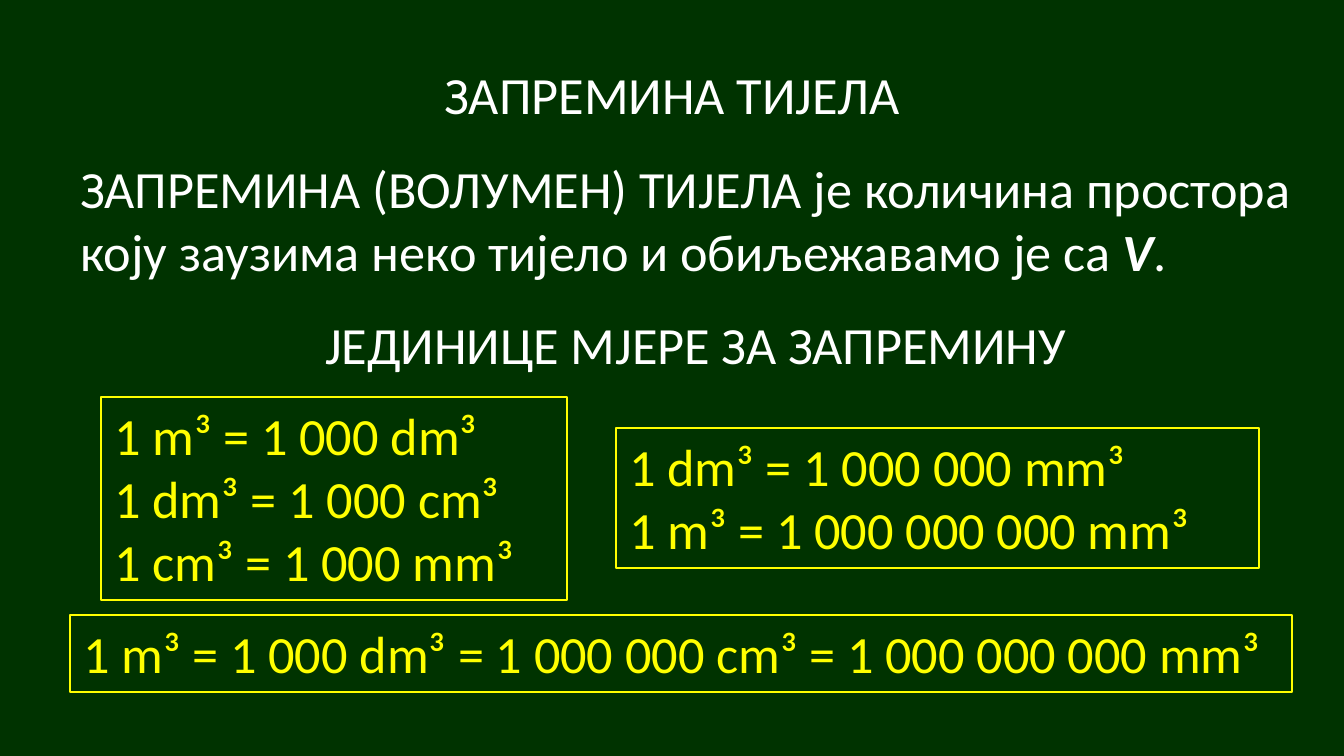
from pptx import Presentation
from pptx.dml.color import RGBColor
from pptx.enum.shapes import MSO_SHAPE
from pptx.enum.text import MSO_ANCHOR, PP_ALIGN
from pptx.util import Pt

EMU_PER_PX = 914400 / 134.4
BACKGROUND, WHITE, YELLOW = "003300", "FFFFFF", "FFFF00"


def px(length):
    return round(length * EMU_PER_PX)


def paint(target, color):
    """Give a fill a solid colour from a hex string."""
    target.solid()
    target.fore_color.rgb = RGBColor.from_string(color)


def write(shape, paragraphs, color=WHITE, size=28, align=PP_ALIGN.LEFT,
          anchor=MSO_ANCHOR.TOP):
    """Fill a shape with paragraphs, each a list of (text, emphasized) runs."""
    frame = shape.text_frame
    frame.word_wrap = True
    frame.vertical_anchor = anchor
    for index, runs in enumerate(paragraphs):
        paragraph = frame.paragraphs[0] if index == 0 else frame.add_paragraph()
        paragraph.alignment = align
        for text, emphasized in runs:
            run = paragraph.add_run()
            run.text = text
            font = run.font
            font.name, font.size = "Calibri", Pt(size)
            font.bold = font.italic = emphasized
            paint(font.fill, color)


def add_statement(slide, box, runs, **style):
    statement = slide.shapes.add_textbox(*map(px, box))
    write(statement, [runs], **style)


def add_conversions(slide, box, equations):
    """Framed list of unit conversions, one equation a line."""
    panel = slide.shapes.add_shape(MSO_SHAPE.RECTANGLE, *map(px, box))
    panel.shadow.inherit = False
    panel.fill.background()
    paint(panel.line.fill, YELLOW)
    panel.line.width = Pt(0.75)
    write(panel, [[(equation, False)] for equation in equations], color=YELLOW)


def build_volume_slide(deck):
    slide = deck.slides.add_slide(deck.slide_layouts[6])
    paint(slide.background.fill, BACKGROUND)
    add_statement(slide, (67, 31, 1210, 126), [("ЗАПРЕМИНА ТИЈЕЛА", False)],
                  align=PP_ALIGN.CENTER, anchor=MSO_ANCHOR.MIDDLE)
    add_statement(slide, (67, 150, 1288, 157), [
        ("ЗАПРЕМИНА (ВОЛУМЕН) ТИЈЕЛА је количина простора "
         "коју заузима неко тијело и обиљежавамо је са ", False),
        ("V", True),
        (".", False),
    ])
    add_statement(slide, (312, 306, 789, 77),
                  [("ЈЕДИНИЦЕ МЈЕРЕ ЗА ЗАПРЕМИНУ", False)])
    add_conversions(slide, (101, 397, 466, 203), [
        "1 m³ = 1 000 dm³",
        "1 dm³ = 1 000 cm³",
        "1 cm³ = 1 000 mm³",
    ])
    add_conversions(slide, (70, 615, 1222, 77), [
        "1 m³ = 1 000 dm³ = 1 000 000 cm³ = 1 000 000 000 mm³",
    ])
    add_conversions(slide, (616, 428, 643, 140), [
        "1 dm³ = 1 000 000 mm³",
        "1 m³ = 1 000 000 000 mm³",
    ])


def main():
    deck = Presentation()
    deck.slide_width, deck.slide_height = px(1344), px(756)
    build_volume_slide(deck)
    deck.save("out.pptx")


if __name__ == "__main__":
    main()
